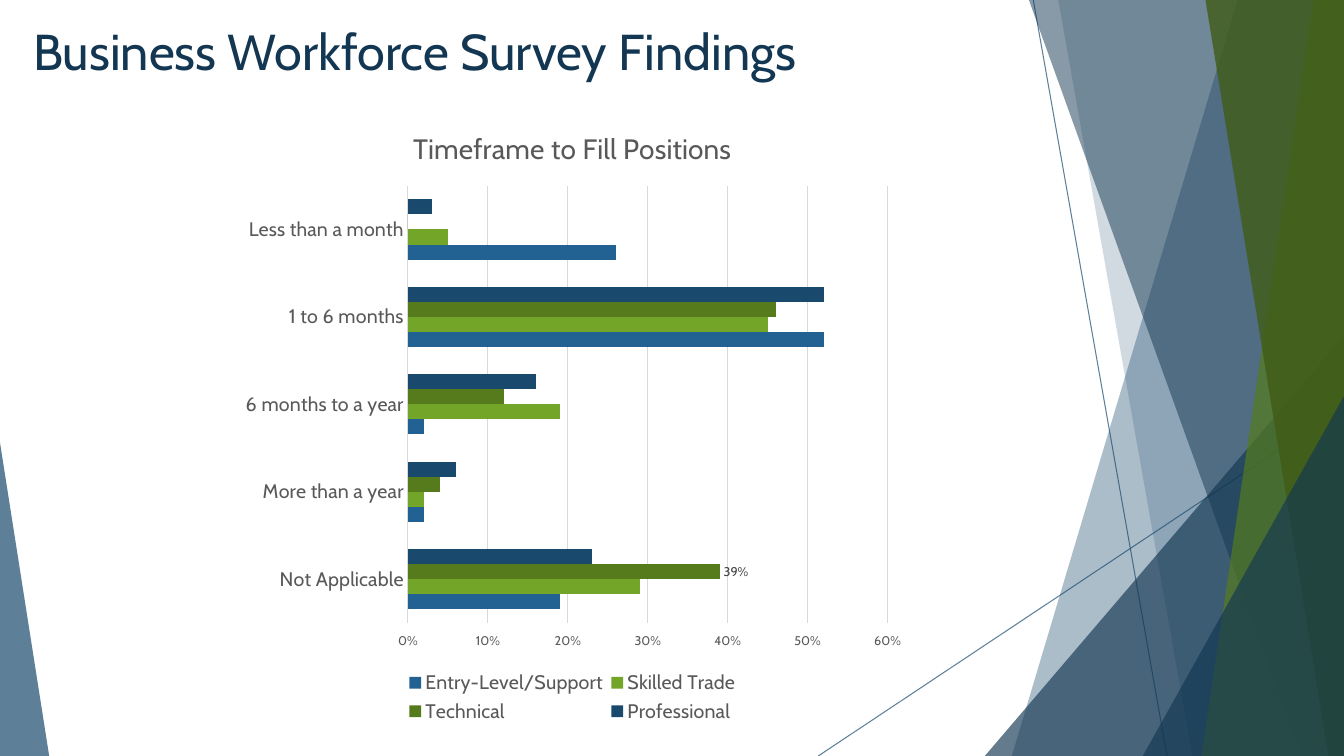
from lxml.etree import SubElement
from pptx import Presentation
from pptx.chart.data import CategoryChartData
from pptx.dml.color import RGBColor
from pptx.enum.chart import (XL_CHART_TYPE, XL_LABEL_POSITION, XL_LEGEND_POSITION,
                             XL_TICK_LABEL_POSITION, XL_TICK_MARK)
from pptx.enum.shapes import MSO_CONNECTOR, MSO_SHAPE
from pptx.enum.text import MSO_ANCHOR, PP_ALIGN
from pptx.oxml import parse_xml
from pptx.oxml.ns import nsdecls, qn
from pptx.util import Cm, Pt

FONT = "Cabin"
NAVY, BLUE, GRAY, GRID = "133752", "19496D", "595959", "D9D9D9"
WIDTH, HEIGHT = 33.87, 19.05


def paint(fill, color, opacity=100):
    fill.solid()
    fill.fore_color.rgb = RGBColor.from_string(color)
    if opacity < 100:
        for element in fill._xPr.iter(qn("a:srgbClr")):
            SubElement(element, qn("a:alpha"), val=str(opacity * 1000))


def set_layout(parent, index, inner=False, **fractions):
    for existing in parent.findall(qn("c:layout")):
        parent.remove(existing)
    target = '<c:layoutTarget val="inner"/>' if inner else ""
    modes = "".join(f'<c:{name}Mode val="edge"/>' for name in fractions if name in "xy")
    values = "".join(f'<c:{name} val="{value}"/>' for name, value in fractions.items())
    parent.insert(index, parse_xml(
        f'<c:layout {nsdecls("c")}><c:manualLayout>{target}{modes}{values}</c:manualLayout></c:layout>'))


presentation = Presentation()
presentation.slide_width, presentation.slide_height = Cm(WIDTH), Cm(HEIGHT)
slide = presentation.slides.add_slide(presentation.slide_layouts[5])
shapes = slide.shapes

# Thin crossing lines
for ends in [(26.04, 0, 29.41, HEIGHT), (WIDTH, 10.24, 20.62, HEIGHT)]:
    connector = shapes.add_connector(MSO_CONNECTOR.STRAIGHT, *[Cm(value) for value in ends])
    connector.line.width = Pt(0.75)
    paint(connector.line.fill, BLUE, 70)
    SubElement(connector._element.spPr, qn("a:effectLst"))

# Translucent facets: panels (top x, bottom x) reach the right edge,
# triangles (left, top, width, apex) stand on the bottom edge
facets = [
    ((31.19, 25.5), BLUE, 36),
    ((26.67, 30.05), BLUE, 20),
    ((24.82, 8.46, 9.05, 1), NAVY, 66),
    ((25.93, 32.79), NAVY, 50),
    ((33.1, 30.28), "557B1D", 70),
    ((30.38, 33.48), "405C16", 80),
    ((28.8, 9.98, 5.07, 1), NAVY, 66),
    ((0, 11.15, 1.24, 0), BLUE, 70),
]
for geometry, color, opacity in facets:
    if len(geometry) == 2:
        top_x, bottom_x = geometry
        builder = shapes.build_freeform(Cm(top_x), 0)
        corners = [(WIDTH, 0), (WIDTH, HEIGHT), (bottom_x, HEIGHT)]
        builder.add_line_segments([(Cm(x), Cm(y)) for x, y in corners], close=True)
        shape = builder.convert_to_shape()
    else:
        left, top, width, apex = geometry
        shape = shapes.add_shape(MSO_SHAPE.ISOSCELES_TRIANGLE,
                                 Cm(left), Cm(top), Cm(width), Cm(HEIGHT - top))
        shape.adjustments[0] = apex
    shape.shadow.inherit = False
    shape.line.fill.background()
    paint(shape.fill, color, opacity)

# Title
title = shapes.title
title.left, title.top, title.width, title.height = Cm(0.58), Cm(0.38), Cm(21.08), Cm(1.8)
title.text_frame.text = "Business Workforce Survey Findings"
title.text_frame.vertical_anchor = MSO_ANCHOR.MIDDLE
paragraph = title.text_frame.paragraphs[0]
paragraph.alignment = PP_ALIGN.LEFT
paragraph.font.name, paragraph.font.size = FONT, Pt(36)
paragraph.font.color.rgb = RGBColor.from_string(NAVY)

# Chart data
series_rows = [
    ("Professional", BLUE, (0.03, 0.52, 0.16, 0.06, 0.23)),
    ("Technical", "557B1D", (0, 0.46, 0.12, 0.04, 0.39)),
    ("Skilled Trade", "72A528", (0.05, 0.45, 0.19, 0.02, 0.29)),
    ("Entry-Level/Support", "226292", (0.26, 0.52, 0.02, 0.02, 0.19)),
]
chart_data = CategoryChartData(number_format="0%")
chart_data.categories = ["Less than a month", "1 to 6 months", "6 months to a year",
                         "More than a year", "Not Applicable"]
for name, color, values in series_rows:
    chart_data.add_series(name, values)
chart = shapes.add_chart(XL_CHART_TYPE.BAR_CLUSTERED, Cm(5.79), Cm(2.82),
                         Cm(17.27), Cm(15.52), chart_data).chart
chart.font.name, chart.font.size = FONT, Pt(10)

# Bars
plot = chart.plots[0]
plot.gap_width, plot.overlap, plot.vary_by_categories = 182, 0, False
for series, (name, color, values) in zip(plot.series, series_rows):
    paint(series.format.fill, color)
technical = plot.series[1]
technical.data_labels.show_value = False
label = technical.points[4].data_label
label.position = XL_LABEL_POSITION.OUTSIDE_END

# Axes: categories run downwards, percentages stand at the far (lower) end
category_axis, value_axis = chart.category_axis, chart.value_axis
for axis in (category_axis, value_axis):
    axis.major_tick_mark = axis.minor_tick_mark = XL_TICK_MARK.NONE
category_axis.reverse_order = True
value_axis.tick_label_position = XL_TICK_LABEL_POSITION.HIGH
value_axis.minimum_scale, value_axis.maximum_scale, value_axis.major_unit = 0, 0.6, 0.1
value_axis.tick_labels.number_format = "0%"
value_axis.tick_labels.number_format_is_linked = False
value_axis.format.line.fill.background()
for line in (category_axis.format.line, value_axis.major_gridlines.format.line):
    line.width = Pt(0.75)
    paint(line.fill, GRID)

# Chart title and legend
chart.has_title = True
chart.chart_title.text_frame.text = "Timeframe to Fill Positions"
chart.has_legend = True
chart.legend.position = XL_LEGEND_POSITION.BOTTOM
chart.legend.include_in_layout = False

# Chart fonts
for font, size, color in [
    (chart.chart_title.text_frame.paragraphs[0].font, 20, GRAY),
    (chart.legend.font, 14, GRAY),
    (category_axis.tick_labels.font, 14, GRAY),
    (value_axis.tick_labels.font, 9, GRAY),
    (label.font, 9, "404040"),
]:
    font.name, font.size, font.bold = FONT, Pt(size), False
    font.color.rgb = RGBColor.from_string(color)

# Chart layout, in fractions of the chart area
set_layout(chart.chart_title._element, 1, x=0.26, y=0.02)
set_layout(chart._chartSpace.chart.plotArea, 0, inner=True, x=0.26, y=0.12, w=0.7, h=0.71)
set_layout(chart.legend._element, 1, x=0.25, y=0.9, w=0.5, h=0.1)

presentation.save("out.pptx")
